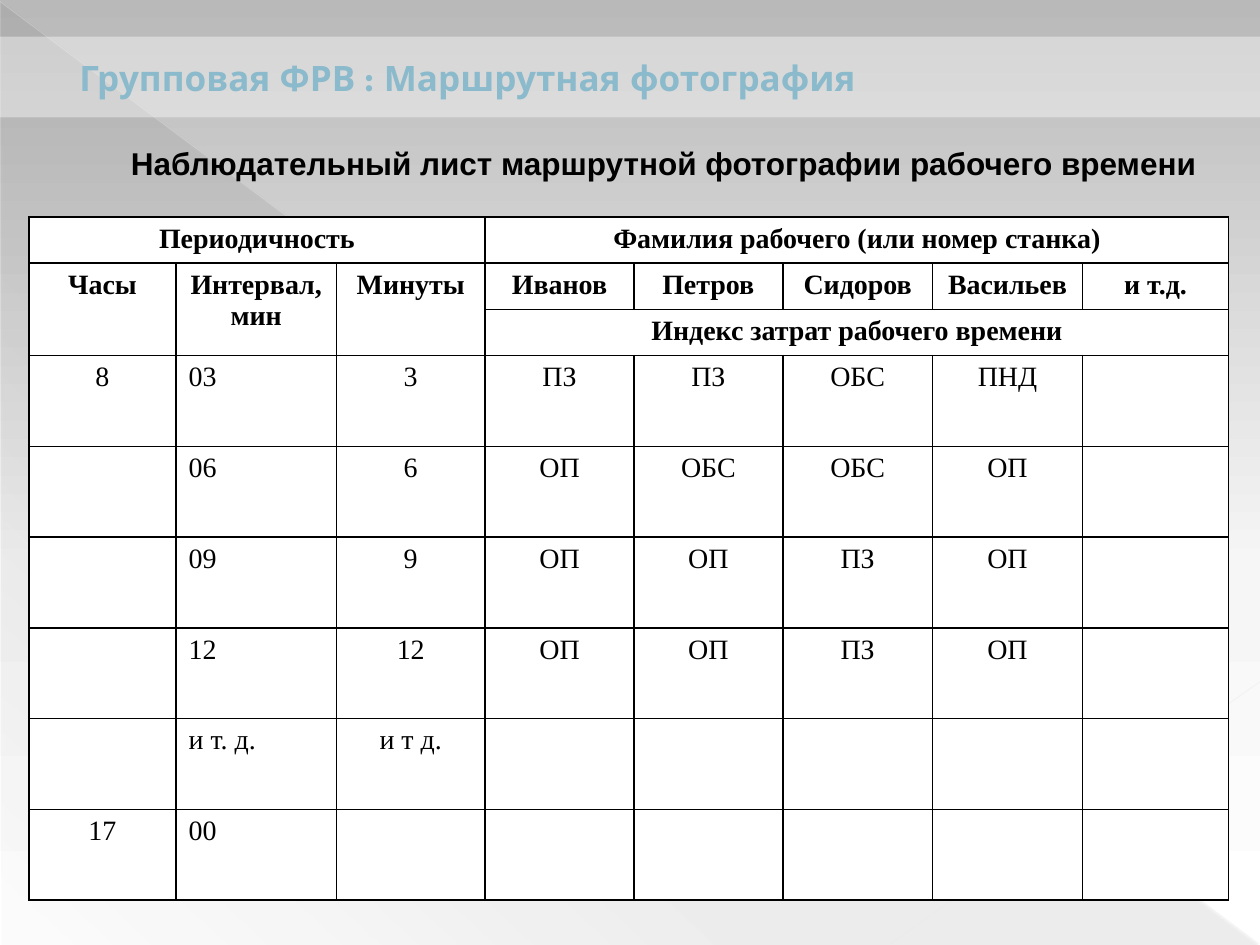
import lxml.etree
import pptx
import pptx.dml.color
import pptx.enum.shapes
import pptx.enum.text
import pptx.oxml.ns
import pptx.util

Cm, Pt = pptx.util.Cm, pptx.util.Pt
qn = pptx.oxml.ns.qn
ALIGN = pptx.enum.text.PP_ALIGN
ANCHOR = pptx.enum.text.MSO_ANCHOR

COLUMN_WIDTHS = [2.97, 3.23, 3, 3, 3, 3.02, 3.02, 2.95]
HEADER_ROWS = 3
HEADER_HEIGHT, BODY_HEIGHT = 0.93, 1.83
INTERVAL_COLUMN = 1
SHEET = [
    ["Периодичность", "", "", "Фамилия рабочего (или номер станка)", "", "", "", ""],
    ["Часы", "Интервал, мин", "Минуты", "Иванов", "Петров", "Сидоров", "Васильев", "и т.д."],
    ["", "", "", "Индекс затрат рабочего времени", "", "", "", ""],
    ["8", "03", "3", "ПЗ", "ПЗ", "ОБС", "ПНД", ""],
    ["", "06", "6", "ОП", "ОБС", "ОБС", "ОП", ""],
    ["", "09", "9", "ОП", "ОП", "ПЗ", "ОП", ""],
    ["", "12", "12", "ОП", "ОП", "ПЗ", "ОП", ""],
    ["", "и т. д.", "и т д.", "", "", "", "", ""],
    ["17", "00", "", "", "", "", "", ""],
]
# First and last cell of each merged block, as (row, column)
MERGES = [((0, 0), (0, 2)), ((0, 3), (0, 7)), ((2, 3), (2, 7))]
MERGES += [((1, column), (2, column)) for column in range(3)]


def rgb(code):
    return pptx.dml.color.RGBColor.from_string(code)


def add_xml(parent, tag, **attributes):
    return lxml.etree.SubElement(parent, qn(tag), attributes)


def set_opacity(color_element, percent):
    add_xml(color_element, "a:alpha", val=str(percent * 1000))


def set_gradient(properties, stops, angle):
    """Turn the solid fill of the properties into a linear gradient."""
    solid = properties.find(qn("a:solidFill"))
    gradient = lxml.etree.Element(qn("a:gradFill"), rotWithShape="1")
    stop_list = add_xml(gradient, "a:gsLst")
    for position, code, opacity in stops:
        stop = add_xml(stop_list, "a:gs", pos=str(position * 1000))
        set_opacity(add_xml(stop, "a:srgbClr", val=code), opacity)
    add_xml(gradient, "a:lin", ang=str(angle * 60000), scaled="0")
    properties.replace(solid, gradient)


def format_text(paragraph, font, size, code, bold, align=ALIGN.LEFT):
    paragraph.alignment = align
    for run in paragraph.runs:
        run.font.name, run.font.size, run.font.bold = font, Pt(size), bold
        run.font.color.rgb = rgb(code)


def add_faint_line(slide, start, end, code, width, opacity):
    line = slide.shapes.add_connector(
        pptx.enum.shapes.MSO_CONNECTOR.STRAIGHT, *map(Cm, start + end))
    line.line.color.rgb = rgb(code)
    line.line.width = Pt(width)
    properties = line.element.spPr
    set_opacity(next(properties.iter(qn("a:srgbClr"))), opacity)
    add_xml(properties, "a:effectLst")


def add_backdrop(slide, left, top, width, height):
    slide.background.fill.solid()
    slide.background.fill.fore_color.rgb = rgb("FFFFFF")
    set_gradient(next(slide.element.iter(qn("p:bgPr"))),
                 [(0, "B9B9B9", 100), (60, "F6F6F6", 100), (100, "FFFFFF", 100)], 90)

    # Shaded half below the diagonal
    shade = slide.shapes.add_shape(
        pptx.enum.shapes.MSO_SHAPE.RIGHT_TRIANGLE, Cm(left + 0.03), Cm(top + 0.05),
        Cm(width - 0.05), Cm(height - 0.05))
    shade.shadow.inherit = False
    shade.line.fill.background()
    shade.fill.solid()
    shade.fill.fore_color.rgb = rgb("3B3B3B")
    set_gradient(shade.element.spPr,
                 [(0, "3B3B3B", 10), (70, "3B3B3B", 8), (100, "3B3B3B", 1)], 133)

    # Diagonal and corner lines
    bottom = top + height - 0.03
    add_faint_line(slide, (left, top + 0.03), (left + width - 0.03, bottom),
                   "EAE8E6", 0.39, 35)
    add_faint_line(slide, (left + width, top + 13.74), (left + width - 7.44, bottom),
                   "ECEAE8", 0.47, 45)


def add_title_band(slide, left, top, width, height):
    band = slide.shapes.add_textbox(Cm(left), Cm(top), Cm(width), Cm(height))
    band.fill.solid()
    band.fill.fore_color.rgb = rgb("FFFFFF")
    set_opacity(next(band.element.spPr.iter(qn("a:srgbClr"))), 40)
    frame = band.text_frame
    frame.word_wrap = True
    frame.vertical_anchor = ANCHOR.MIDDLE
    frame.margin_left = Cm(1.6)
    frame.text = "Групповая ФРВ : Маршрутная фотография"
    title = frame.paragraphs[0]
    format_text(title, "League Spartan", 20, "8ABACB", True)

    # Thin outline around the letters
    outline = lxml.etree.Element(qn("a:ln"), w=str(Pt(0.5)))
    add_xml(add_xml(outline, "a:solidFill"), "a:srgbClr", val="4C6F7A")
    title.runs[0].font.fill  # the run properties exist from here on
    next(title.runs[0]._r.iter(qn("a:rPr"))).insert(0, outline)


def add_sheet_heading(slide, left, top, width, height):
    heading = slide.shapes.add_textbox(Cm(left), Cm(top), Cm(width), Cm(height))
    frame = heading.text_frame
    frame.word_wrap = True
    frame.vertical_anchor = ANCHOR.TOP
    frame.text = "Наблюдательный лист маршрутной фотографии рабочего времени"
    format_text(frame.paragraphs[0], "Arial", 18, "000000", True)


def format_cell(cell, bold, align):
    format_text(cell.text_frame.paragraphs[0], "Times New Roman", 16, "000000", bold, align)
    cell.fill.solid()
    cell.fill.fore_color.rgb = rgb("FFFFFF")
    properties = next(cell._tc.iter(qn("a:tcPr")))
    for index, side in enumerate(["a:lnL", "a:lnR", "a:lnT", "a:lnB"]):
        border = lxml.etree.Element(qn(side), w=str(Pt(1)))
        add_xml(add_xml(border, "a:solidFill"), "a:srgbClr", val="000000")
        properties.insert(index, border)


def add_observation_sheet(slide, left, top):
    heights = [HEADER_HEIGHT if row < HEADER_ROWS else BODY_HEIGHT
               for row in range(len(SHEET))]
    sheet = slide.shapes.add_table(
        len(SHEET), len(COLUMN_WIDTHS), Cm(left), Cm(top),
        Cm(sum(COLUMN_WIDTHS)), Cm(sum(heights))).table
    for column, width in zip(sheet.columns, COLUMN_WIDTHS):
        column.width = Cm(width)
    for row, height in zip(sheet.rows, heights):
        row.height = Cm(height)

    for row, entries in enumerate(SHEET):
        is_header = row < HEADER_ROWS
        for column, entry in enumerate(entries):
            cell = sheet.cell(row, column)
            cell.text_frame.text = entry
            is_left = column == INTERVAL_COLUMN and not is_header
            format_cell(cell, is_header, ALIGN.LEFT if is_left else ALIGN.CENTER)
    for first, last in MERGES:
        sheet.cell(*first).merge(sheet.cell(*last))


def main():
    deck = pptx.Presentation()
    deck.slide_width, deck.slide_height = Cm(25.4), Cm(19.05)
    slide = deck.slides.add_slide(deck.slide_layouts[6])
    add_backdrop(slide, 0, 0, 25.4, 19.05)
    add_title_band(slide, 0, 0.74, 25.4, 1.63)
    add_sheet_heading(slide, 2.39, 2.77, 22.02, 1.8)
    add_observation_sheet(slide, 0.58, 4.37)
    deck.save("out.pptx")


if __name__ == "__main__":
    main()
